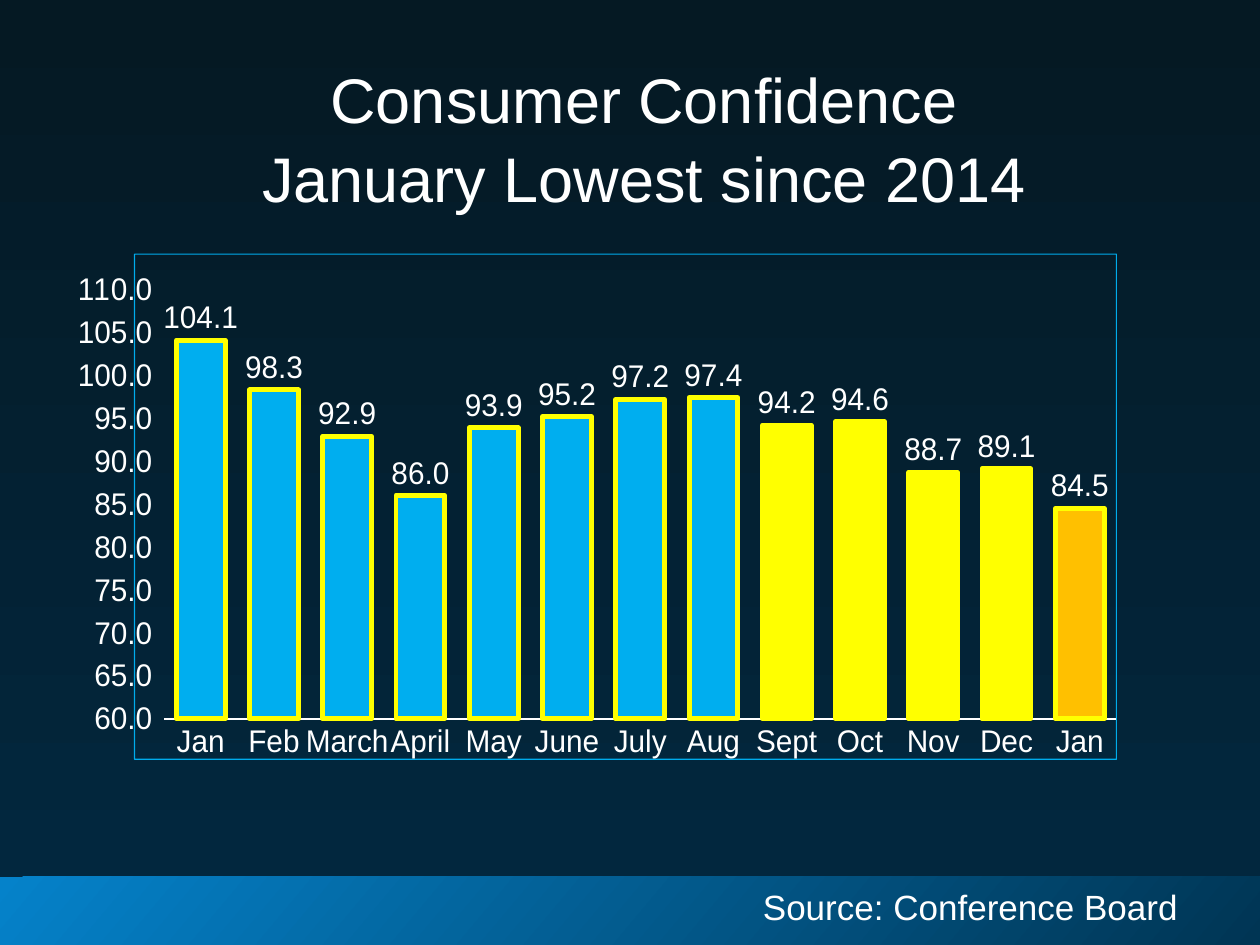
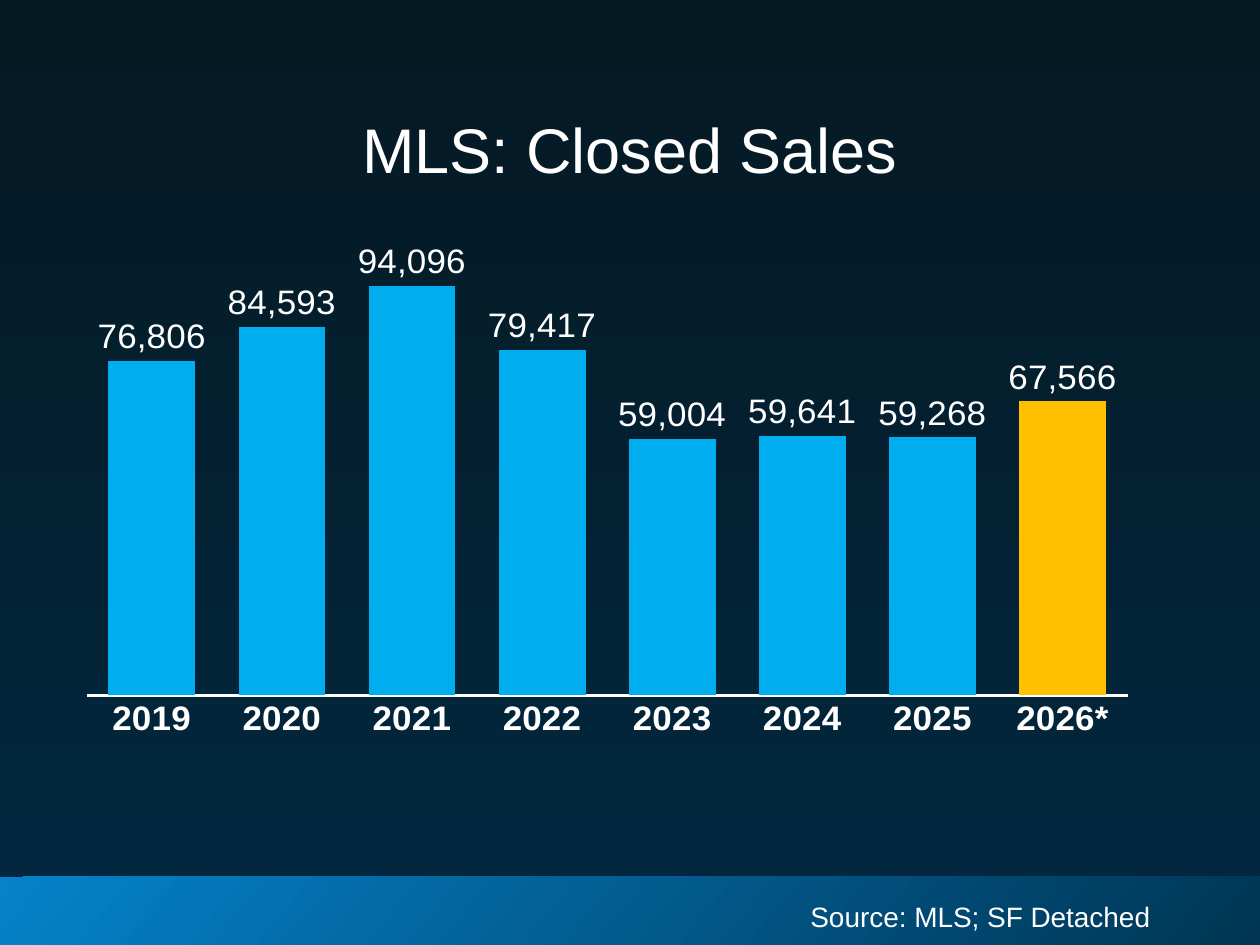
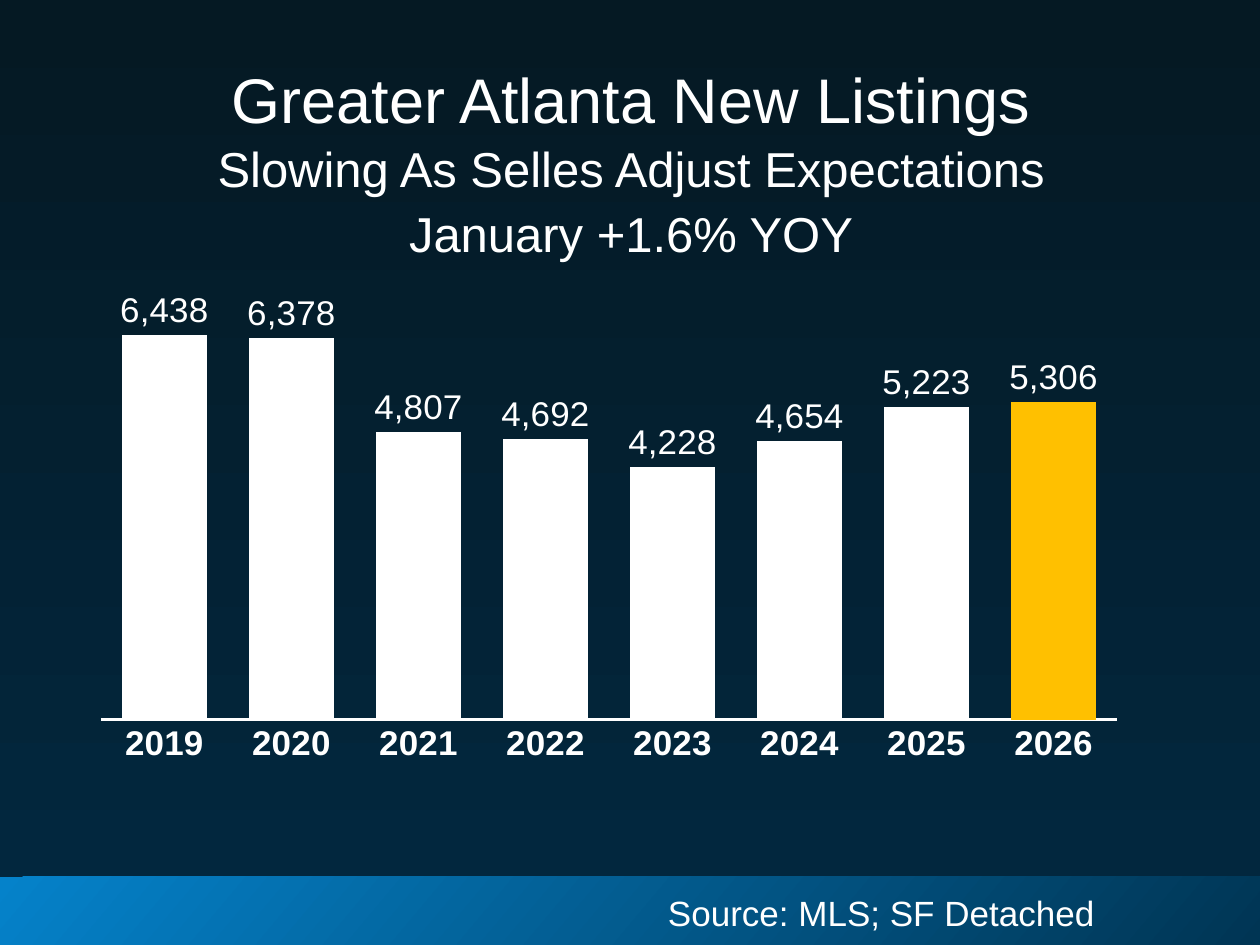
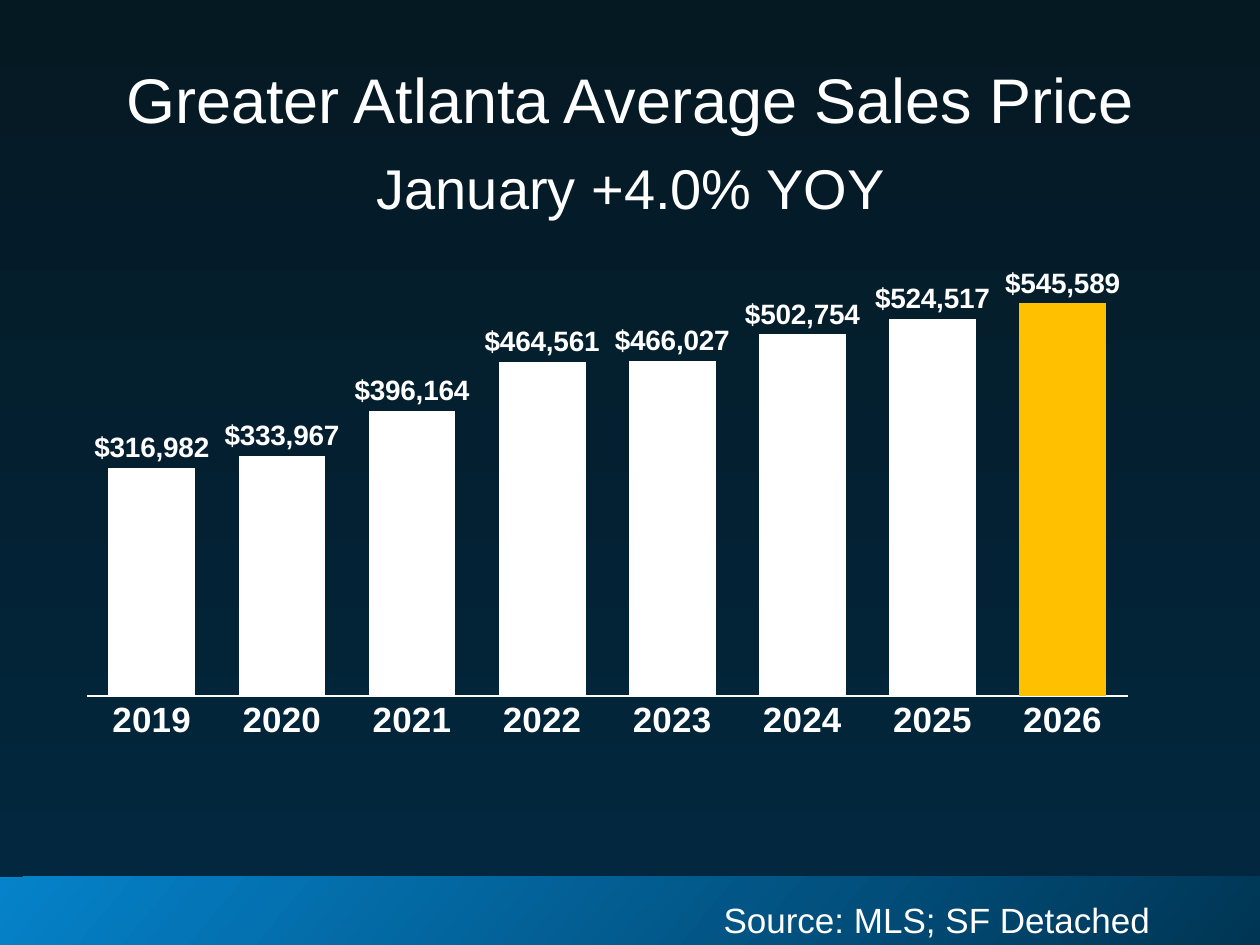
from pptx import Presentation
from pptx.chart.data import CategoryChartData
from pptx.dml.color import RGBColor
from pptx.enum.chart import XL_CHART_TYPE as ChartType
from pptx.enum.chart import XL_LABEL_POSITION as LabelPos
from pptx.enum.chart import XL_TICK_MARK as Tick
from pptx.enum.shapes import MSO_SHAPE as Preset
from pptx.enum.text import MSO_ANCHOR as Anchor
from pptx.enum.text import MSO_AUTO_SIZE as AutoSize
from pptx.enum.text import PP_ALIGN as Align
from pptx.oxml import parse_xml
from pptx.oxml.ns import nsdecls, qn
from pptx.util import Cm, Pt

# Shared look
COLORS = {
    "night": "051923", "navy": "022840",
    "band_left": "0582CA", "band_right": "003554",
    "white": "FFFFFF", "blue": "00AEEF", "yellow": "FFFF00", "gold": "FFC000",
}
FONT = "Arial"
BAND_BOX = (0, 17.68, 25.4, 1.37)
YEARS = [str(year) for year in range(2019, 2027)]

# Content: texts, boxes (left, top, width, height in cm) and chart values
SLIDES = [
    {
        "title": [("Consumer Confidence", 36), ("January Lowest since 2014", 36)],
        "title_box": (2.21, 1.14, 21.54, 1.5),
        "source": ("Source: Conference Board", 20),
        "source_box": (2.21, 17.81, 21.54, 1.24),
        "chart_box": (1.57, 5.11, 20.96, 10.21),
        "plot": (0.07, 0.07, 0.97, 0.85),
        "months": ["Jan", "Feb", "March", "April", "May", "June", "July",
                   "Aug", "Sept", "Oct", "Nov", "Dec", "Jan"],
        "values": [104.1, 98.3, 92.9, 86.0, 93.9, 95.2, 97.2, 97.4,
                   94.2, 94.6, 88.7, 89.1, 84.5],
        "bars": ["blue"] * 8 + ["yellow"] * 4 + ["gold"],
        "outline": "yellow", "axis_from": 60, "overlap": 0,
        "number_format": "0.0",
        "label_font": {"size": Pt(18), "bold": False},
        "category_font": {"size": Pt(18), "bold": False},
    },
    {
        "title": [("MLS: Closed Sales", 36)],
        "title_box": (0, 2.16, 25.4, 1.5),
        "source": ("Source: MLS; SF Detached", 16),
        "source_box": (2.26, 18.08, 20.93, 0.71),
        "chart_box": (1.32, 4.9, 21.44, 10.67),
        "plot": (0.02, 0, 0.98, 0.85),
        "months": YEARS[:-1] + ["2026*"],
        "values": [76806, 84593, 94096, 79417, 59004, 59641, 59268, 67566],
        "bars": ["blue"] * 7 + ["gold"],
        "number_format": "#,##0",
        "label_font": {"size": Pt(20), "bold": False},
    },
    {
        "title": [("Greater Atlanta New Listings", 36),
                  ("Slowing As Selles Adjust Expectations", 28)],
        "title_box": (2.24, 1.14, 20.96, 1.5),
        "change": ("January +1.6% YOY", 28),
        "change_box": (2.24, 4.04, 20.96, 0.86),
        "source": ("Source: MLS; SF Detached", 20),
        "source_box": (1.14, 17.93, 20.93, 0.71),
        "chart_box": (2.01, 5.87, 20.93, 10.13),
        "plot": (0, 0, 0.98, 0.85),
        "values": [6438, 6378, 4807, 4692, 4228, 4654, 5223, 5306],
        "bars": ["white"] * 7 + ["gold"],
        "number_format": "#,##0",
        "label_font": {"size": Pt(20), "bold": False},
    },
    {
        "title": [("Greater Atlanta Average Sales Price", 36)],
        "title_box": (0, 1.14, 25.4, 1.5),
        "change": ("January +4.0% YOY", 32),
        "change_box": (2.24, 3.02, 20.96, 0.97),
        "source": ("Source: MLS; SF Detached", 20),
        "source_box": (2.26, 18.08, 20.93, 0.71),
        "chart_box": (1.32, 5.33, 21.44, 10.24),
        "plot": (0.02, 0, 0.98, 0.85),
        "values": [316982, 333967, 396164, 464561, 466027, 502754, 524517, 545589],
        "bars": ["white"] * 7 + ["gold"],
        "number_format": '"$"#,##0',
        "label_font": {"size": Pt(16), "bold": True},
    },
]


def rgb(name):
    return RGBColor.from_string(COLORS[name])


def set_attrs(target, values):
    for name, value in values.items():
        setattr(target, name, value)


def style_font(font, **values):
    set_attrs(font, {"name": FONT, **values})
    font.color.rgb = rgb("white")


def blend(fill, first, last, angle):
    fill.gradient()
    fill.gradient_angle = 360 - angle
    for stop, color in zip(fill.gradient_stops, (first, last)):
        stop.color.rgb = rgb(color)


def place(shape, box):
    set_attrs(shape, dict(zip(("left", "top", "width", "height"), map(Cm, box))))


# Background and bottom band on the master
def dress_master(prs, slide):
    master = prs.slide_master
    blend(master.background.fill, "night", "navy", 90)
    band = slide.shapes.add_shape(Preset.RECTANGLE, *map(Cm, BAND_BOX))
    band.shadow.inherit = False
    band.line.fill.background()
    blend(band.fill, "band_left", "band_right", 40)
    band.element.nvSpPr.cNvPr.set("id", "20")
    master.element.cSld.spTree.insert(2, band.element)


# Title, change line and source all go through one writer
def write(holder, box, lines, align, spacing, inset=0):
    place(holder, box)
    frame = holder.text_frame
    set_attrs(frame, {
        "word_wrap": True, "auto_size": AutoSize.NONE, "vertical_anchor": Anchor.TOP,
        "margin_left": 0, "margin_right": 0,
        "margin_top": Cm(inset), "margin_bottom": Cm(inset),
    })
    paragraph = frame.paragraphs[0]
    properties = paragraph._p.get_or_add_pPr()
    properties.set("marL", "0")
    properties.set("indent", "0")
    properties.append(parse_xml(f"<a:buNone {nsdecls('a')}/>"))
    set_attrs(paragraph, {"alignment": align, "line_spacing": spacing,
                          "space_before": Pt(0)})
    for number, (text, size) in enumerate(lines):
        if number:
            paragraph.add_line_break()
        run = paragraph.add_run()
        run.text = text
        style_font(run.font, size=Pt(size))


def fix_plot(chart, plot):
    area = chart.element.find(".//" + qn("c:plotArea"))
    for old in area.findall(qn("c:layout")):
        area.remove(old)
    sizes = "".join(f'<c:{key} val="{value}"/>' for key, value in zip("xywh", plot))
    area.insert(0, parse_xml(
        f"<c:layout {nsdecls('c')}><c:manualLayout>"
        '<c:layoutTarget val="inner"/><c:xMode val="edge"/><c:yMode val="edge"/>'
        f"{sizes}</c:manualLayout></c:layout>"))


def frame_chart(chart, color):
    chart.element.find(qn("c:chart")).addnext(parse_xml(
        f"<c:spPr {nsdecls('c', 'a')}><a:noFill/><a:ln w=\"9525\"><a:solidFill>"
        f'<a:srgbClr val="{COLORS[color]}"><a:alpha val="98000"/></a:srgbClr>'
        "</a:solidFill></a:ln></c:spPr>"))


def paint_bar(look, color, outline):
    look.fill.solid()
    look.fill.fore_color.rgb = rgb(color)
    if outline:
        look.line.color.rgb = rgb(outline)
        look.line.width = Pt(3)


def add_bars(slide, part):
    data = CategoryChartData(number_format=part["number_format"])
    data.categories = part.get("months", YEARS)
    data.add_series("Series 1", part["values"])
    chart = slide.shapes.add_chart(ChartType.COLUMN_CLUSTERED,
                                   *map(Cm, part["chart_box"]), data).chart
    set_attrs(chart, {"has_title": False, "has_legend": False})
    style_font(chart.font, size=Pt(18))
    fix_plot(chart, part["plot"])

    # Bars and their labels
    bars = chart.plots[0]
    set_attrs(bars, {"gap_width": 50, "overlap": part.get("overlap", -27),
                     "vary_by_categories": False, "has_data_labels": True})
    labels = bars.data_labels
    set_attrs(labels, {"show_value": True, "position": LabelPos.OUTSIDE_END,
                       "number_format": part["number_format"],
                       "number_format_is_linked": False})
    style_font(labels.font, **part["label_font"])
    series = bars.series[0]
    series.invert_if_negative = False
    main, outline = part["bars"][0], part.get("outline")
    paint_bar(series.format, main, outline)
    for index, color in enumerate(part["bars"]):
        if color != main:
            paint_bar(series.points[index].format, color, outline)

    # Axes
    months, scale = chart.category_axis, chart.value_axis
    set_attrs(months, {"major_tick_mark": Tick.NONE, "has_major_gridlines": False})
    style_font(months.tick_labels.font,
               **part.get("category_font", {"size": Pt(20), "bold": True}))
    months.format.line.color.rgb = rgb("white")
    months.format.line.width = Pt(1.5)
    set_attrs(scale, {"has_major_gridlines": False,
                      "minimum_scale": part.get("axis_from", 0)})
    if "axis_from" in part:
        scale.major_tick_mark = Tick.OUTSIDE
        set_attrs(scale.tick_labels, {"number_format": part["number_format"],
                                      "number_format_is_linked": False})
        style_font(scale.tick_labels.font, size=Pt(18), bold=False)
        scale.format.line.fill.background()
        frame_chart(chart, "blue")
    else:
        scale.visible = False


def main():
    prs = Presentation()
    prs.slide_width, prs.slide_height = Cm(25.4), Cm(19.05)
    for number, part in enumerate(SLIDES):
        # One body for the source, two when there is a change line
        layout = prs.slide_layouts[3 if "change" in part else 1]
        slide = prs.slides.add_slide(layout)
        if number == 0:
            dress_master(prs, slide)
        title, *bodies = slide.placeholders
        write(title, part["title_box"], part["title"], Align.CENTER, 1.05)
        if "change" in part:
            write(bodies[0], part["change_box"], [part["change"]], Align.CENTER, 1.05)
        write(bodies[-1], part["source_box"], [part["source"]], Align.RIGHT, 0.9, 0.13)
        add_bars(slide, part)
    prs.save("out.pptx")


if __name__ == "__main__":
    main()
